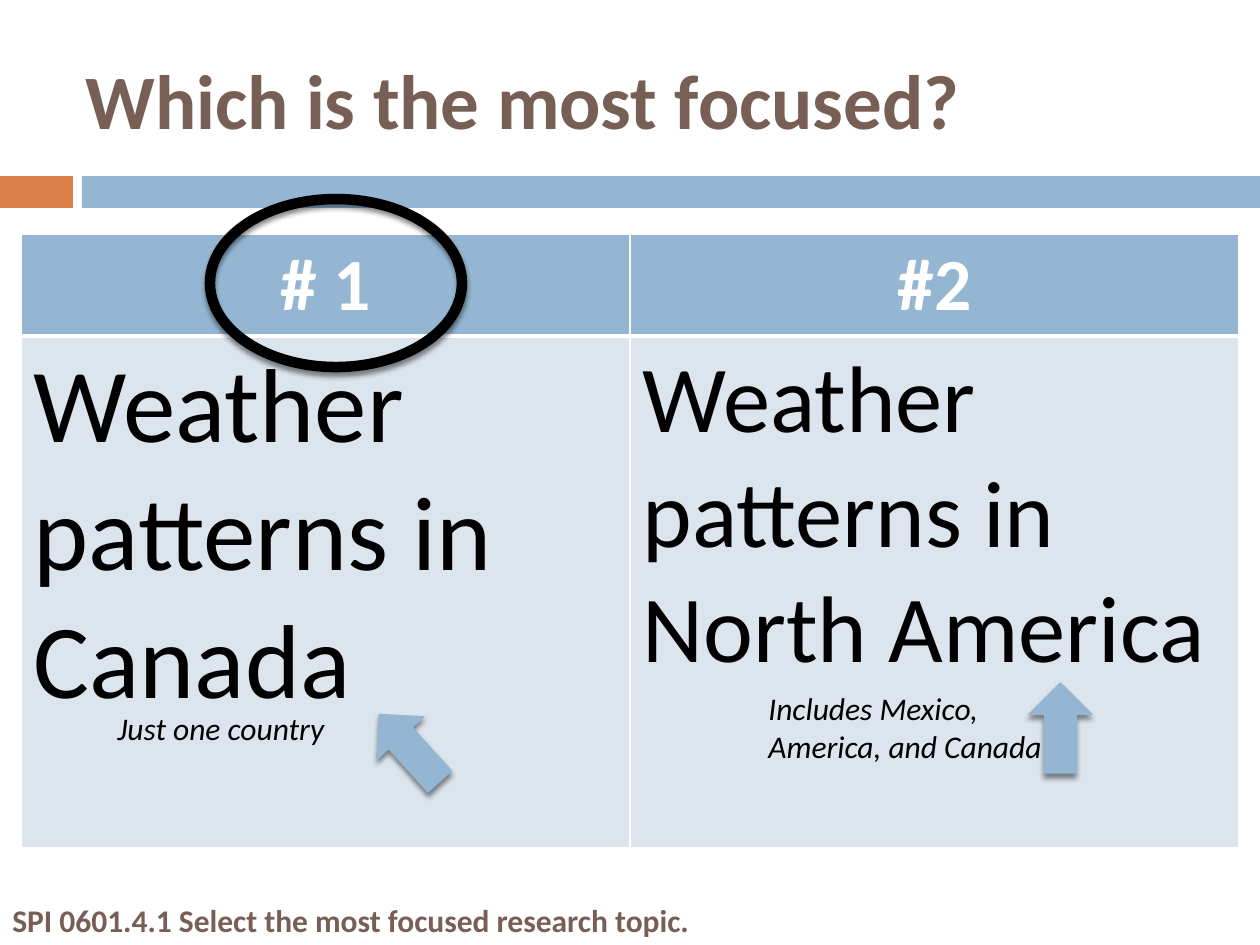
from lxml import etree
from pptx import Presentation
from pptx.dml.color import RGBColor
from pptx.enum.shapes import MSO_SHAPE
from pptx.enum.text import MSO_ANCHOR, PP_ALIGN
from pptx.oxml import parse_xml
from pptx.oxml.ns import nsdecls, qn
from pptx.util import Pt

RECT, OVAL, UP_ARROW = MSO_SHAPE.RECTANGLE, MSO_SHAPE.OVAL, MSO_SHAPE.UP_ARROW
TOP, MIDDLE = MSO_ANCHOR.TOP, MSO_ANCHOR.MIDDLE
LEFT, CENTER = PP_ALIGN.LEFT, PP_ALIGN.CENTER

BLUE = RGBColor(0x94, 0xB6, 0xD2)
PALE = RGBColor(0xDC, 0xE5, 0xEE)
ORANGE = RGBColor(0xDD, 0x80, 0x47)
BROWN = RGBColor(0x77, 0x5F, 0x55)
BLACK = RGBColor(0, 0, 0)
WHITE = RGBColor(255, 255, 255)

PX_PER_INCH = 126
FONT = "Calibri"
HEADING = {"size": Pt(44), "bold": True}
FOOTER = {"size": Pt(18), "bold": True}
NOTE = {"size": Pt(18), "italic": True}


def px(n):
    return round(n * 914400 / PX_PER_INCH)


def write(tf, text, fmt, color, align=LEFT):
    p = tf.paragraphs[0]
    p.alignment = align
    r = p.add_run()
    r.text = text
    for name, value in {"name": FONT, **fmt}.items():
        setattr(r.font, name, value)
    r.font.color.rgb = color


def add_text(slide, box, text, fmt, color, anchor=TOP):
    tf = slide.shapes.add_textbox(*map(px, box)).text_frame
    tf.word_wrap = True
    tf.vertical_anchor = anchor
    write(tf, text, fmt, color)


def add_shape(slide, kind, box, fill=None, line=None, width=0, shadow=False):
    sp = slide.shapes.add_shape(kind, *map(px, box))
    sp.shadow.inherit = False
    if fill is None:
        sp.fill.background()
    else:
        sp.fill.solid()
        sp.fill.fore_color.rgb = fill
    if line is None:
        sp.line.fill.background()
    else:
        sp.line.color.rgb = line
        sp.line.width = Pt(width)
    if shadow:
        effects = sp._element.spPr.find(qn("a:effectLst"))
        effects.append(parse_xml(
            f'<a:outerShdw {nsdecls("a")} blurRad="{Pt(3)}" dist="{Pt(2.4)}" '
            'dir="5400000" rotWithShape="0"><a:srgbClr val="000000">'
            '<a:alpha val="45000"/></a:srgbClr></a:outerShdw>'))
    return sp


def set_borders(cell, widths):
    """Draw white borders; widths run left, right, top, bottom in points."""
    tcPr = cell._tc.get_or_add_tcPr()
    for i, (side, width) in enumerate(zip("LRTB", widths)):
        ln = etree.Element(qn(f"a:ln{side}"), w=str(Pt(width)))
        fill = etree.SubElement(ln, qn("a:solidFill"))
        etree.SubElement(fill, qn("a:srgbClr"), val=str(WHITE))
        tcPr.insert(i, ln)


def header(slide, x, y, w):
    add_text(slide, (x + 73, y + 31, w - 73, 136),
             "Which is the most focused?", HEADING, BROWN, MIDDLE)
    # Accent band
    add_shape(slide, RECT, (x, y + 176, 73, 32), ORANGE)
    add_shape(slide, RECT, (x + 82, y + 176, w - 82, 32), BLUE)


def topic_table(slide, x, y, w, h):
    head_h = 102
    table = slide.shapes.add_table(2, 2, px(x), px(y), px(w), px(h)).table
    for row, height in zip(table.rows, (head_h, h - head_h)):
        row.height = px(height)
    topics = [("# 1", "Weather patterns in Canada", 60),
              ("#2", "Weather patterns in North America", 54)]
    for col, (title, topic, size) in enumerate(topics):
        table.columns[col].width = px(w / 2)
        rows = [(title, {"size": Pt(42), "bold": True}, WHITE, CENTER, BLUE, (1, 1, 1, 3)),
                (topic, {"size": Pt(size), "bold": False}, BLACK, LEFT, PALE, (1, 1, 3, 1))]
        for row, (text, fmt, color, align, fill, borders) in enumerate(rows):
            cell = table.cell(row, col)
            cell.fill.solid()
            cell.fill.fore_color.rgb = fill
            set_borders(cell, borders)
            write(cell.text_frame, text, fmt, color, align)


def note(slide, x, y, text, rotation=0):
    """Place a remark and the arrow that points from it to the topic."""
    add_text(slide, (x, y, 336, 90), text, NOTE, BLACK)
    arrow = add_shape(slide, UP_ARROW, (x + 273, y, 63, 90), BLUE, BLUE, 0.79, True)
    arrow.rotation = rotation


def main():
    prs = Presentation()
    prs.slide_width, prs.slide_height = px(1260), px(945)
    slide = prs.slides.add_slide(prs.slide_layouts[6])
    header(slide, 0, 0, 1260)
    topic_table(slide, 21, 234, 1218, 614)
    # Ring around the right answer
    add_shape(slide, OVAL, (210, 199, 252, 168), line=BLACK, width=6, shadow=True)
    note(slide, 756, 683, "Includes Mexico, America, and Canada")
    note(slide, 105, 703, "Just one country", 317.9)
    # Learning standard
    add_text(slide, (0, 895, 1260, 50),
             "SPI 0601.4.1 Select the most focused research topic.", FOOTER, BROWN)
    prs.save("out.pptx")


if __name__ == "__main__":
    main()
